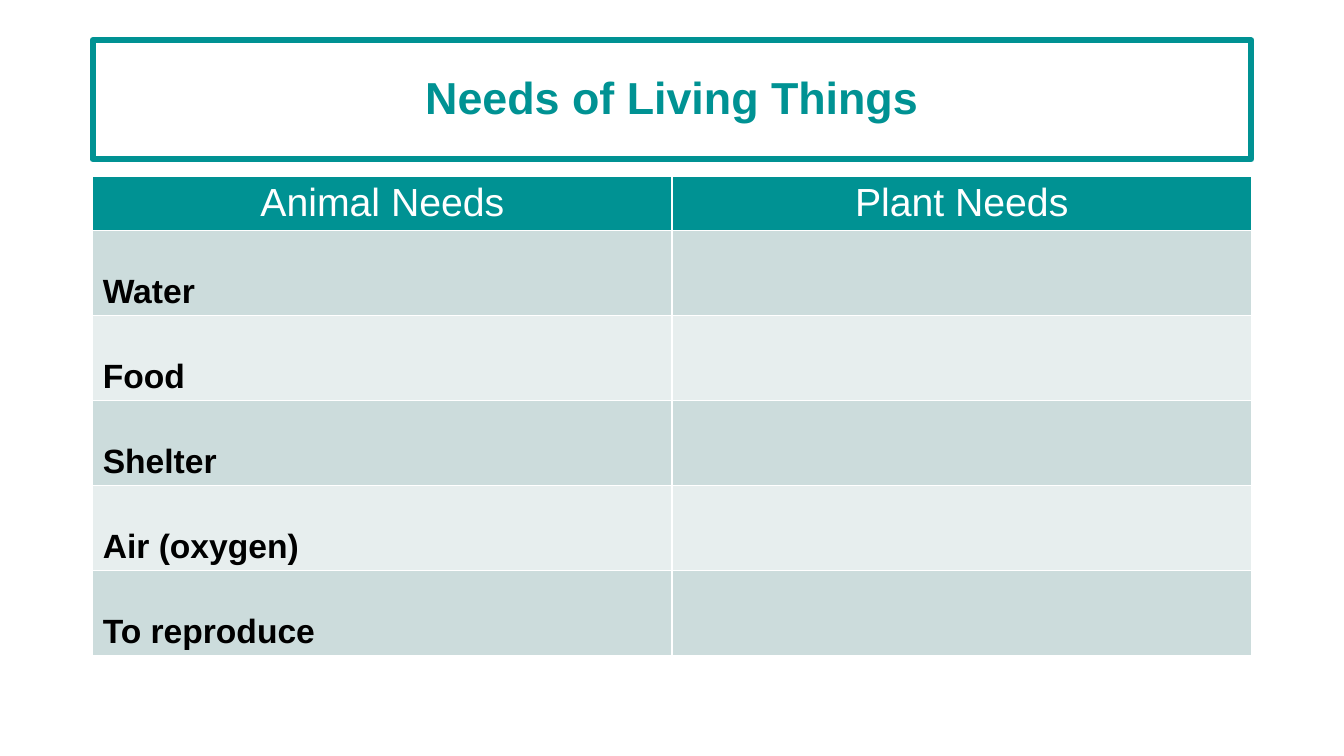
from pptx import Presentation
from pptx.dml.color import RGBColor
from pptx.enum.text import MSO_ANCHOR, PP_ALIGN
from pptx.oxml import parse_xml
from pptx.oxml.ns import nsdecls
from pptx.util import Inches, Pt

TEAL, WHITE, BLACK = "009293", "FFFFFF", "000000"
BANDS = ["CCDCDC", "E7EEEE"]
HEADERS = ["Animal Needs", "Plant Needs"]
ANIMAL_NEEDS = ["Water", "Food", "Shelter", "Air (oxygen)", "To reproduce"]


def rgb(color):
    return RGBColor.from_string(color)


class SlideBuilder:
    font = "Arial"
    columns, rows = 29, 75

    def __init__(self, prs):
        self.col = prs.slide_width / self.columns
        self.row = prs.slide_height / self.rows
        self.s = prs.slides.add_slide(prs.slide_layouts[5])

    def box(self, x, y, w, h):
        return [int(n) for n in (x * self.col, y * self.row, w * self.col, h * self.row)]

    def style(self, p, size, color, bold, align):
        p.alignment = align
        p.font.name = self.font
        p.font.size = Pt(size)
        p.font.bold = bold
        p.font.color.rgb = rgb(color)

    def title(self, text, x, y, w, h):
        sp = self.s.shapes.title
        sp.left, sp.top, sp.width, sp.height = self.box(x, y, w, h)
        sp.fill.solid()
        sp.fill.fore_color.rgb = rgb(WHITE)
        sp.line.color.rgb = rgb(TEAL)
        sp.line.width = Pt(4.5)
        tf = sp.text_frame
        tf.text = text
        tf.vertical_anchor = MSO_ANCHOR.MIDDLE
        p = tf.paragraphs[0]
        p.line_spacing = 0.9
        self.style(p, 32, TEAL, True, PP_ALIGN.CENTER)

    def borders(self, cell):
        tc_pr = cell._tc.get_or_add_tcPr()
        for side in "LRTB":
            tc_pr.append(parse_xml(
                f'<a:ln{side} {nsdecls("a")} w="{Pt(1)}"><a:solidFill>'
                f'<a:srgbClr val="{WHITE}"/></a:solidFill></a:ln{side}>'))

    def cell(self, cell, text, fill, size, color, bold, align, anchor):
        self.borders(cell)
        cell.fill.solid()
        cell.fill.fore_color.rgb = rgb(fill)
        cell.vertical_anchor = anchor
        cell.text = text
        self.style(cell.text_frame.paragraphs[0], size, color, bold, align)

    def table(self, headers, needs, x, y, w, header_h, need_h):
        h = header_h + need_h * len(needs)
        table = self.s.shapes.add_table(
            len(needs) + 1, len(headers), *self.box(x, y, w, h)).table
        table.rows[0].height = int(header_h * self.row)
        for c, header in enumerate(headers):
            self.cell(table.cell(0, c), header, TEAL, 28, WHITE, False,
                      PP_ALIGN.CENTER, MSO_ANCHOR.TOP)
        for r, need in enumerate(needs, 1):
            table.rows[r].height = int(need_h * self.row)
            for c, text in enumerate([need, ""]):
                self.cell(table.cell(r, c), text, BANDS[(r - 1) % 2], 24, BLACK, True,
                          PP_ALIGN.LEFT, MSO_ANCHOR.BOTTOM)


def main():
    prs = Presentation()
    prs.slide_width, prs.slide_height = Inches(13.33), Inches(7.5)
    slide = SlideBuilder(prs)
    slide.title("Needs of Living Things", 2, 4, 25, 11.8)
    slide.table(HEADERS, ANIMAL_NEEDS, 2, 17.5, 25, 5.3, 8.44)
    prs.save("out.pptx")


if __name__ == "__main__":
    main()
